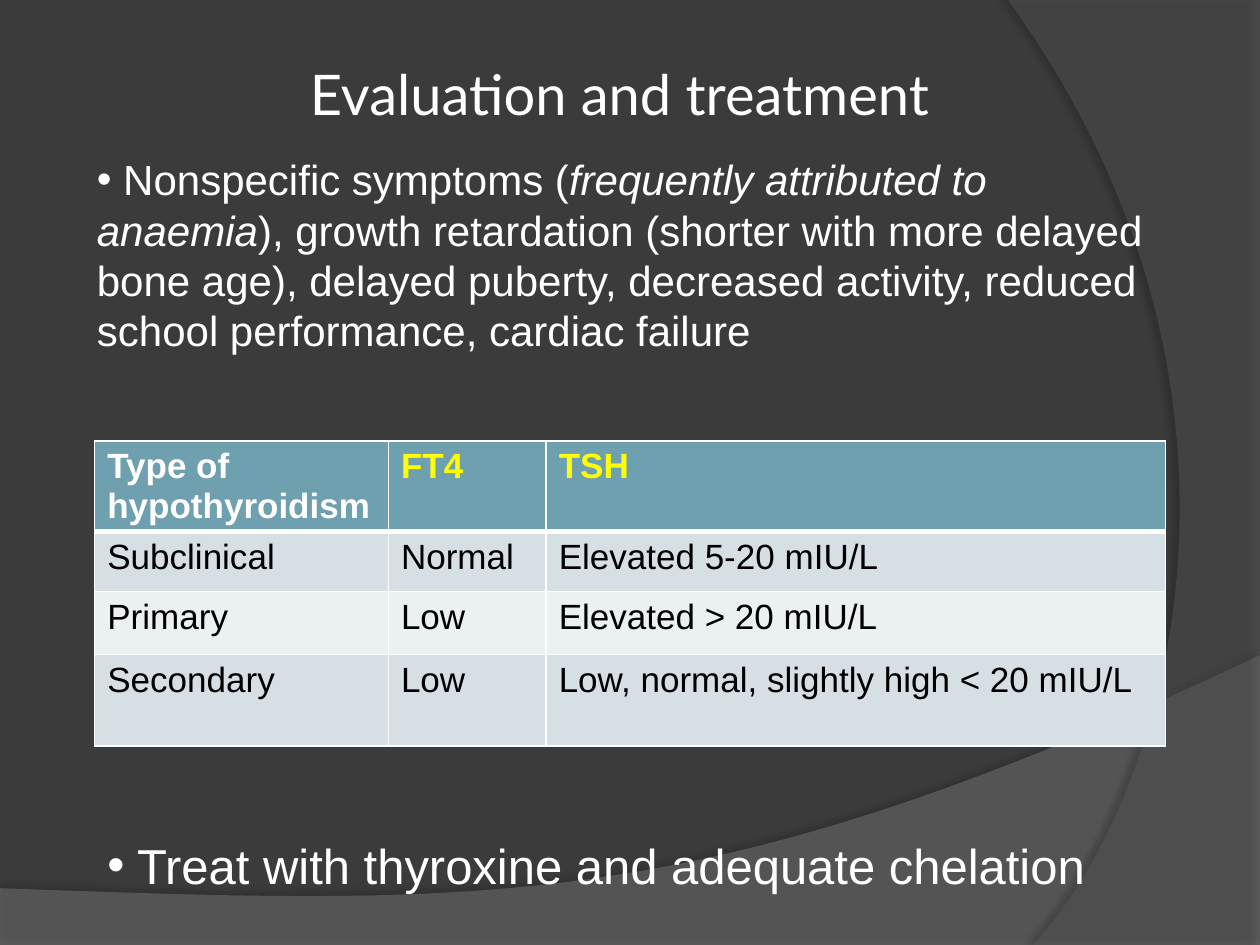
from dataclasses import dataclass
from lxml.etree import SubElement as Sub
from pptx import Presentation
from pptx.dml.color import RGBColor as RGB
from pptx.enum.text import MSO_ANCHOR as Anchor, MSO_AUTO_SIZE as Fit, PP_ALIGN as Align
from pptx.oxml.ns import qn
from pptx.util import Cm, Pt


@dataclass(frozen=True)
class Theme:
    back: str = "3B3B3B"
    swoosh: str = "7F7F7F"
    band: str = "5E5E5E"
    light: str = "FFFFFF"
    dark: str = "000000"
    accent: str = "FFFF00"
    head: str = "6EA0B0"
    rows: tuple = ("D5DFE4", "EBF0F2")
    sans: str = "Arial"
    display: str = "Lato"
    title: int = 32
    body: int = 24
    treat: int = 28
    cell: int = 20


T = Theme()
DATA = [
    ("Type of hypothyroidism", "FT4", "TSH"),
    ("Subclinical", "Normal", "Elevated 5-20 mIU/L"),
    ("Primary", "Low", "Elevated > 20 mIU/L"),
    ("Secondary", "Low", "Low, normal, slightly high < 20 mIU/L"),
]


def style(para, face, size, color, bold=False):
    font = para.font
    font.name, font.size, font.bold = face, Pt(size), bold
    font.color.rgb = RGB.from_string(color)


def place(shape, box):
    shape.left, shape.top, shape.width, shape.height = map(Cm, box)


def add_color(parent, color, alpha=100):
    node = Sub(parent, qn("a:srgbClr"), val=color)
    Sub(node, qn("a:alpha"), val=str(alpha * 1000))


def bezier(p0, p1, p2, p3, steps=60):
    """Points along a cubic curve, after its start."""
    for i in range(1, steps + 1):
        t = i / steps
        u = 1 - t
        yield tuple(u**3 * a + 3 * u * u * t * b + 3 * u * t * t * c + t**3 * d
                    for a, b, c, d in zip(p0, p1, p2, p3))


def add_sweep(slide, box, edges, curve, color, alpha, shade):
    """Translucent backdrop shape; points are fractions of the box."""
    x, y, w, h = box
    points = [(Cm(x + w * a), Cm(y + h * b))
              for a, b in [*edges, *bezier(edges[-1], *curve)]]
    build = slide.shapes.build_freeform(*points[0])
    build.add_line_segments(points[1:], close=True)
    shape = build.convert_to_shape()
    shape.line.fill.background()
    shape.fill.solid()
    shape.fill.fore_color.rgb = RGB.from_string(color)
    props = shape.element.spPr
    tint = props.find(qn("a:solidFill"))[0]
    Sub(tint, qn("a:alpha"), val=str(alpha * 1000))
    # Soft shadow along the curved edge
    depth, blur, dist, angle = shade
    cast = Sub(Sub(props, qn("a:effectLst")), qn("a:outerShdw"),
               blurRad=str(Pt(blur)), dist=str(Pt(dist)),
               dir=str(angle * 60000), rotWithShape="0")
    add_color(cast, T.dark, depth)
    return shape


def add_backdrop(slide, box):
    x, y, w, h = box
    fill = slide.background.fill
    fill.solid()
    fill.fore_color.rgb = RGB.from_string(T.back)
    swoosh = add_sweep(
        slide, (x, y + 13.21, w, 5.87), [(0, .8), (0, 1), (1, 1), (1, 0)],
        [(.56, .9), (.39, .86), (0, .8)], T.swoosh, 45, (35, 4, 3.5, 270))
    band = add_sweep(
        slide, (x + w * .8, y, w * .2, h), [(1, 0), (1, 1), (.1, 1)],
        [(.68, .83), (1.09, .4), (0, 0)], T.band, 40, (45, 4, 4, 180))
    # Send both behind the text
    for spot, shape in enumerate((swoosh, band), 2):
        slide.shapes._spTree.insert(spot, shape.element)


def fill_title(shape, box, text):
    place(shape, box)
    frame = shape.text_frame
    frame.text = text
    frame.auto_size, frame.vertical_anchor = Fit.NONE, Anchor.MIDDLE
    para = frame.paragraphs[0]
    para.alignment = Align.CENTER
    style(para, T.display, T.title, T.light)


def fill_point(shape, box, size, runs):
    """One bulleted paragraph; runs are (text, italic) pairs."""
    place(shape, box)
    frame = shape.text_frame
    frame.auto_size, frame.word_wrap = Fit.NONE, True
    frame.vertical_anchor = Anchor.TOP
    para = frame.paragraphs[0]
    para.space_before = Pt(0)
    for text, slant in runs:
        run = para.add_run()
        run.text = text
        if slant:
            run.font.italic = True
    style(para, T.sans, size, T.light)
    props = para._p.get_or_add_pPr()
    props.set("marL", "0")
    props.set("indent", "0")
    mark = props.find(qn("a:defRPr"))
    for tag, key, value in (("a:buFont", "typeface", T.sans), ("a:buChar", "char", "•")):
        node = Sub(props, qn(tag))
        node.set(key, value)
        mark.addprevious(node)


def add_borders(cell, top, base):
    props = cell._tc.get_or_add_tcPr()
    for side, width in (("L", 1), ("R", 1), ("T", top), ("B", base)):
        line = Sub(props, qn("a:ln" + side), w=str(Pt(width)))
        add_color(Sub(line, qn("a:solidFill")), T.light)


def add_grid(slide, box, cols, rows):
    table = slide.shapes.add_table(len(rows), len(cols), *map(Cm, box)).table
    for col, width in zip(table.columns, cols):
        col.width = Cm(width)
    for r, (row, height) in enumerate(zip(table.rows, rows)):
        row.height = Cm(height)
        for c, cell in enumerate(row.cells):
            head = r == 0
            add_borders(cell, 3 if r == 1 else 1, 3 if head else 1)
            cell.fill.solid()
            cell.fill.fore_color.rgb = RGB.from_string(T.head if head else T.rows[(r - 1) % 2])
            cell.text = DATA[r][c]
            ink = (T.accent if c else T.light) if head else T.dark
            style(cell.text_frame.paragraphs[0], T.sans, T.cell, ink, head)


def main():
    deck = Presentation()
    deck.slide_width, deck.slide_height = Cm(25.4), Cm(19.05)
    slide = deck.slides.add_slide(deck.slide_layouts[3])
    title, signs, treat = slide.placeholders

    add_backdrop(slide, (0, 0, 25.4, 19.05))
    fill_title(title, (3.18, 1.07, 18.62, 1.63), "Evaluation and treatment")
    fill_point(signs, (1.7, 2.97, 22.23, 4.37), T.body, [
        (" Nonspecific symptoms (", False),
        ("frequently attributed to anaemia", True),
        ("), growth retardation (shorter with more delayed bone age), delayed "
         "puberty, decreased activity, reduced school performance, cardiac failure", False),
    ])
    add_grid(slide, (1.91, 8.89, 21.59, 6.1), (5.92, 3.18, 12.49), (1.78, 1.2, 1.27, 1.85))
    fill_point(treat, (1.91, 16.71, 20.75, 1.45), T.treat,
               [(" Treat with thyroxine and adequate chelation", False)])
    deck.save("out.pptx")


if __name__ == "__main__":
    main()
